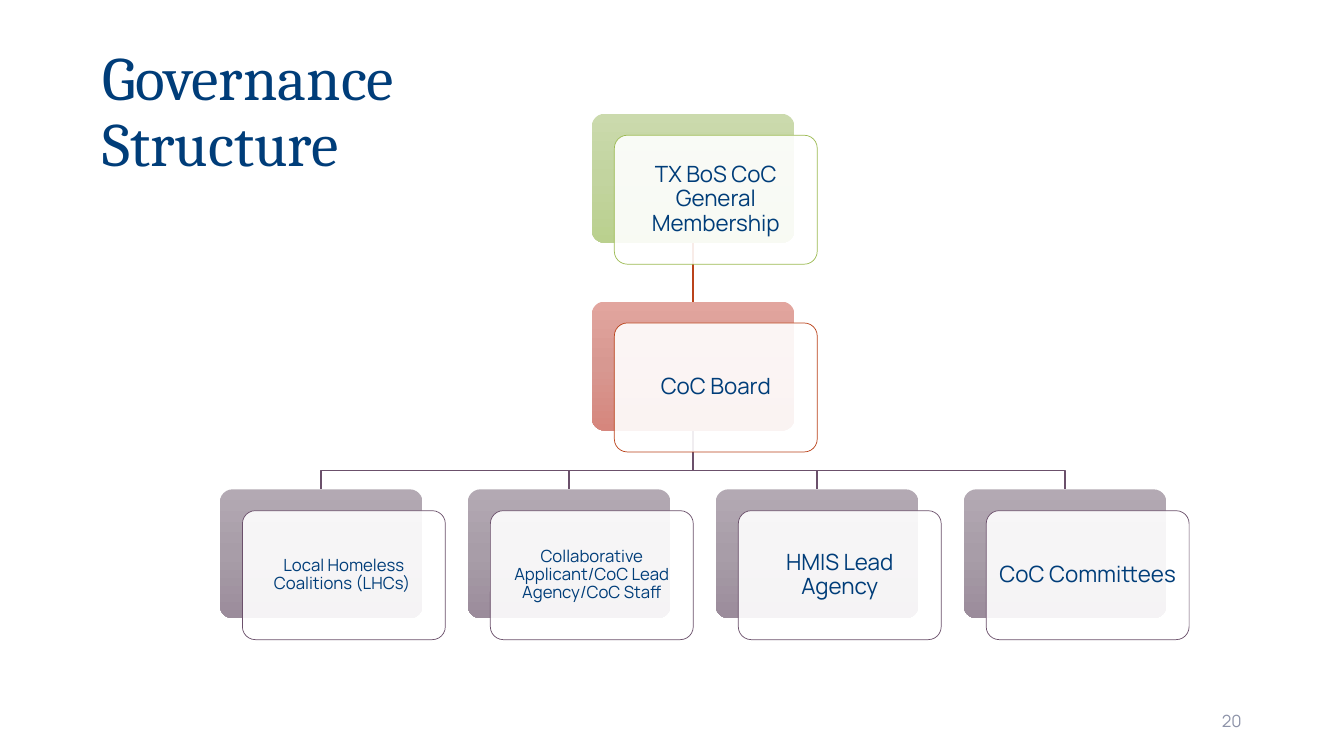
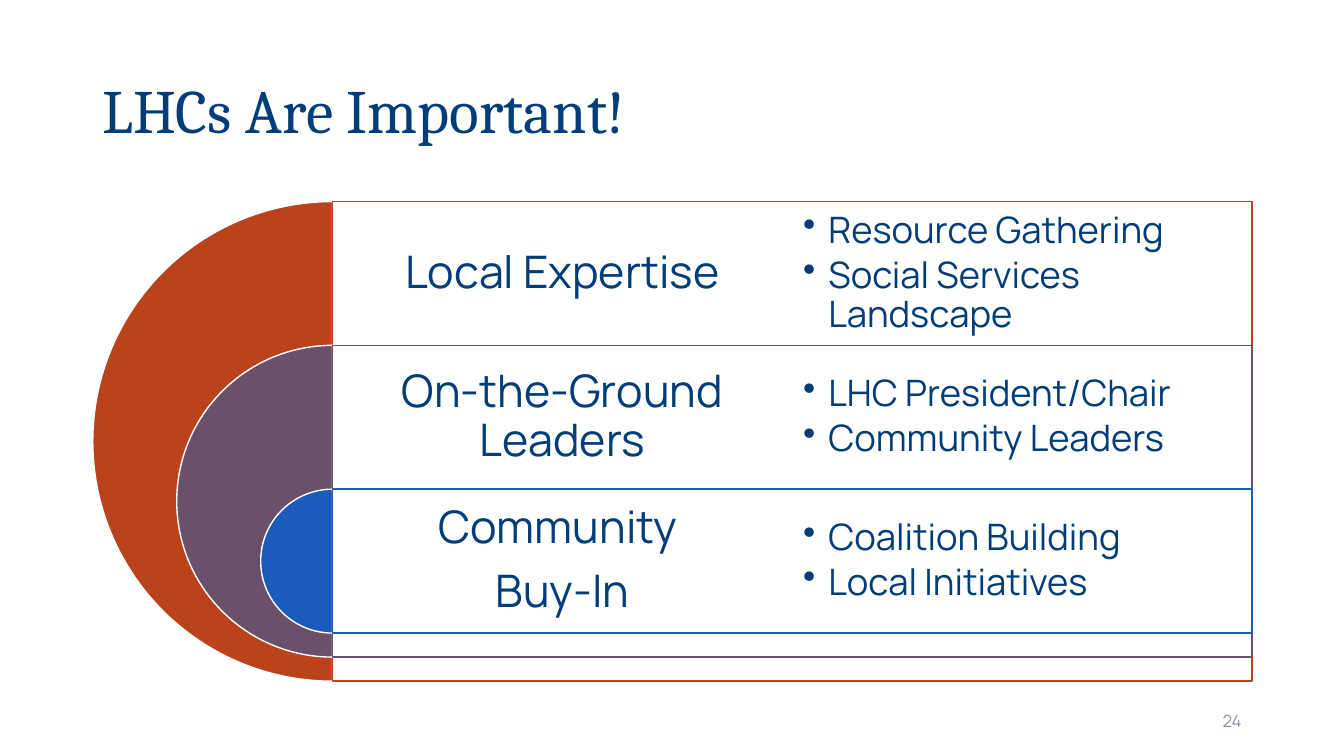
from copy import deepcopy

from lxml import etree
from pptx import Presentation
from pptx.dml.color import RGBColor
from pptx.enum.shapes import MSO_CONNECTOR, MSO_SHAPE
from pptx.enum.text import MSO_ANCHOR, PP_ALIGN
from pptx.oxml.ns import qn
from pptx.util import Pt

LEFT, CENTER, RIGHT = PP_ALIGN.LEFT, PP_ALIGN.CENTER, PP_ALIGN.RIGHT
ROUNDED, RECTANGLE, PIE = MSO_SHAPE.ROUNDED_RECTANGLE, MSO_SHAPE.RECTANGLE, MSO_SHAPE.PIE
BOTTOM_SIDE, TOP_SIDE = 2, 0

NAVY, GREY, WHITE = "003D79", "8C92A8", "FFFFFF"
GREEN, RUST, PLUM, BLUE = "9DBB53", "BA431B", "6B506B", "1B5CBB"
TITLE_FONT, BODY_FONT = "Cambria", "Manrope"

color = RGBColor.from_string


def add_panel(slide, kind, box, fill=None, line=None, width=1, opacity=100):
    shape = slide.shapes.add_shape(kind, *map(Pt, box))
    shape.shadow.inherit = False
    if fill:
        shape.fill.solid()
        shape.fill.fore_color.rgb = color(fill)
        tint = shape._element.spPr.find(qn("a:solidFill"))[0]
        etree.SubElement(tint, qn("a:alpha")).set("val", str(opacity * 1000))
    if line:
        shape.line.color.rgb = color(line)
        shape.line.width = Pt(width)
    else:
        shape.line.fill.background()
    return shape


def add_text(slide, box, lines, size, font=BODY_FONT, ink=NAVY, align=CENTER,
             insets=(7.2, 3.6), line_spacing=0.9, gap=0, bullet=False):
    """Add one paragraph per line; gap is the space after as a share of the size."""
    frame = slide.shapes.add_textbox(*map(Pt, box)).text_frame
    side, edge = map(Pt, insets)
    frame_format = {"word_wrap": True, "vertical_anchor": MSO_ANCHOR.MIDDLE,
                    "margin_left": side, "margin_right": side,
                    "margin_top": edge, "margin_bottom": edge}
    for name, value in frame_format.items():
        setattr(frame, name, value)
    for index, line in enumerate(lines):
        paragraph = frame.add_paragraph() if index else frame.paragraphs[0]
        paragraph.text = line
        if bullet:
            properties = paragraph._p.get_or_add_pPr()
            properties.set("marL", str(Pt(18)))
            properties.set("indent", str(-Pt(18)))
            etree.SubElement(properties, qn("a:buChar")).set("char", "•")
        paragraph.alignment = align
        paragraph.line_spacing = line_spacing
        paragraph.space_after = Pt(size * gap)
        for run in paragraph.runs:
            run.font.size = Pt(size)
            run.font.name = font
            run.font.color.rgb = color(ink)


presentation = Presentation()
presentation.slide_width, presentation.slide_height = Pt(960), Pt(540)

slides = []
for title, number in [("Governance \vStructure", "20"), ("LHCs Are Important!", "24")]:
    slide = presentation.slides.add_slide(presentation.slide_layouts[6])
    add_text(slide, (66, 28.8, 828, 104.4), [title], 44, TITLE_FONT, align=LEFT)
    add_text(slide, (678, 500.4, 216, 28.8), [number], 12, ink=GREY, align=RIGHT,
             line_spacing=1)
    slides.append(slide)
governance, importance = slides

# Governance chart: columns and rows of offset card pairs
CARD_WIDTH, CARD_HEIGHT = 144.9, 92.1
CHART_LEFT, CHART_TOP = 157, 81.3
COLUMN_STEP, ROW_STEP = 177.1, 134.1
OFFSET_X, OFFSET_Y = 16.2, 15.3
MIDDLE = 1.5
GRADIENTS = {GREEN: ("CBDAAD", "C2D49F", "BAD08E"),
             RUST: ("E2A59E", "D79891", "D6867D"),
             PLUM: ("B3A9B3", "A89DA8", "9B8C9B")}
cards = [
    (MIDDLE, 0, GREEN, "TX BoS CoC General Membership", 16),
    (MIDDLE, 1, RUST, "CoC Board", 16),
    (0, 2, PLUM, "Local Homeless Coalitions (LHCs) ", 12),
    (1, 2, PLUM, "Collaborative Applicant/CoC Lead Agency/CoC Staff", 12),
    (2, 2, PLUM, "HMIS Lead Agency", 16),
    (3, 2, PLUM, "CoC Committees", 16),
]

board_x = CHART_LEFT + MIDDLE * COLUMN_STEP + CARD_WIDTH / 2
board_bottom = CHART_TOP + ROW_STEP + CARD_HEIGHT
branch_end = CHART_TOP + 2 * ROW_STEP
branch_turn = branch_end - 13.4
for column in (3, 2, 1, 0):
    x = CHART_LEFT + column * COLUMN_STEP + CARD_WIDTH / 2
    builder = governance.shapes.build_freeform(Pt(board_x), Pt(board_bottom))
    corners = [(board_x, branch_turn), (x, branch_turn), (x, branch_end)]
    builder.add_line_segments([(Pt(a), Pt(b)) for a, b in corners], close=False)
    branch = builder.convert_to_shape()
    branch.shadow.inherit = False
    branch.fill.background()
    branch.line.color.rgb = color(PLUM)
    branch.line.width = Pt(1)

backs = []
for column, row, accent, label, size in cards:
    left, top = CHART_LEFT + column * COLUMN_STEP, CHART_TOP + row * ROW_STEP
    back = add_panel(governance, ROUNDED, (left, top, CARD_WIDTH, CARD_HEIGHT))
    back.fill.gradient()
    back.fill.gradient_angle = 270
    stop_list = back._element.spPr.find(qn("a:gradFill")).find(qn("a:gsLst"))
    stop_list.insert(1, deepcopy(stop_list[0]))
    for stop, position, shade in zip(back.fill.gradient_stops, (0, 0.5, 1), GRADIENTS[accent]):
        stop.position = position
        stop.color.rgb = color(shade)
    left, top = left + OFFSET_X, top + OFFSET_Y
    front = add_panel(governance, ROUNDED, (left, top, CARD_WIDTH, CARD_HEIGHT),
                      WHITE, accent, 0.5, 90)
    back.adjustments[0] = front.adjustments[0] = 0.1
    inset = 4.8 if size == 16 else 3.6
    add_text(governance, (left + 2.7, top + 2.7, CARD_WIDTH - 5.4, CARD_HEIGHT - 5.4),
             [label], size, insets=(inset, inset))
    backs.append(back)

trunk = governance.shapes.add_connector(MSO_CONNECTOR.STRAIGHT, 0, 0, 0, 0)
trunk.begin_connect(backs[0], BOTTOM_SIDE)
trunk.end_connect(backs[1], TOP_SIDE)
trunk.line.color.rgb = color(RUST)
trunk.line.width = Pt(1)
etree.SubElement(trunk._element.spPr, qn("a:effectLst"))
backs[0]._element.addprevious(trunk._element)

# Nested half circles, each with a row of text
AXIS, ROWS_TOP, ROW_HEIGHT = 237.6, 144, 102.7
PANEL_WIDTH, DIAMETER, DIAMETER_STEP = 656.6, 342.6, 119.9
HALF = PANEL_WIDTH / 2
reasons = [
    (RUST, ["Local Expertise"], ["Resource Gathering", "Social Services Landscape"]),
    (PLUM, ["On-the-Ground Leaders"], ["LHC President/Chair", "Community Leaders"]),
    (BLUE, ["Community ", "Buy-In"], ["Coalition Building", "Local Initiatives"]),
]
for index, (accent, heading, points) in enumerate(reasons):
    top = ROWS_TOP + index * ROW_HEIGHT
    diameter = DIAMETER - index * DIAMETER_STEP
    arc = add_panel(importance, PIE, (AXIS - diameter / 2, top, diameter, diameter),
                    accent, WHITE)
    arc.adjustments[0], arc.adjustments[1] = 54, 162
    add_panel(importance, RECTANGLE, (AXIS, top, PANEL_WIDTH, diameter),
              WHITE, accent, opacity=90)
    add_text(importance, (AXIS, top, HALF, ROW_HEIGHT), heading, 32,
             insets=(9.6, 9.6), gap=0.35)
    add_text(importance, (AXIS + HALF, top, HALF, ROW_HEIGHT), points, 26,
             align=LEFT, insets=(7.8, 7.8), gap=0.15, bullet=True)

presentation.save("out.pptx")
